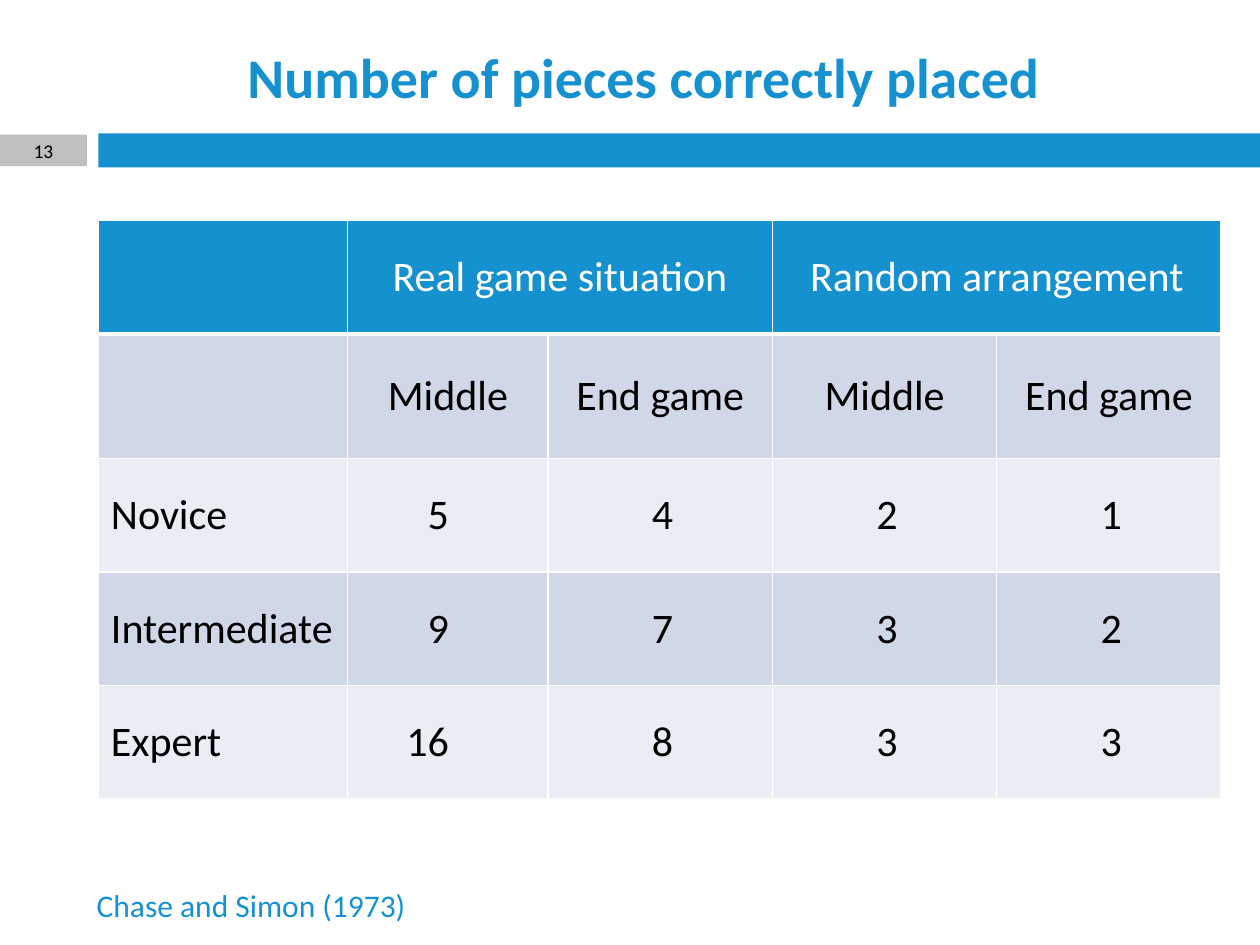
from lxml import etree
from pptx import Presentation
from pptx.dml.color import RGBColor as RGB
from pptx.enum.shapes import MSO_SHAPE as Shape
from pptx.enum.text import MSO_ANCHOR as Anchor, MSO_AUTO_SIZE as Auto, PP_ALIGN as Align
from pptx.oxml.ns import qn
from pptx.util import Pt

HUES = {"blue": "1691D0", "gray": "BFBFBF", "dark": "D0D8E8",
        "light": "E9EDF4", "white": "FFFFFF", "black": "000000"}
WIDTHS = [142.5, 114.5, 128.2, 128.2, 128.2]
HEIGHTS = [64.8, 71.3, 64.8, 64.8, 64.8]
ROWS = [
    ["", "Real game situation", "", "Random arrangement", ""],
    ["", "Middle", "End game", "Middle", "End game"],
    ["Novice", "5", "4", "2", "1"],
    ["Intermediate", "9", "7", "3", "2"],
    ["Expert", "16", "8", "3", "3"],
]


def hue(name):
    return RGB.from_string(HUES[name])


def write(frame, text, size=24, color="black", bold=False, align=Align.LEFT):
    para = frame.paragraphs[0]
    para.alignment = align
    run = para.add_run()
    run.text = text
    font = run.font
    font.name, font.size, font.bold = "Calibri", Pt(size), bold
    font.color.rgb = hue(color)


def place(shape, box):
    shape.left, shape.top, shape.width, shape.height = map(Pt, box)


def block(slide, box, color):
    shape = slide.shapes.add_shape(Shape.RECTANGLE, *map(Pt, box))
    shape.shadow.inherit = False
    shape.fill.solid()
    shape.fill.fore_color.rgb = hue(color)
    shape.line.fill.background()
    return shape


def header(slide, box):
    left, top, width, height = box
    # Blue bar and page number tab
    block(slide, (left, top + 57.6, width, 19.4), "blue")
    tab = block(slide, (0, top + 58.3, left - 6.5, 18), "gray")
    frame = tab.text_frame
    frame.vertical_anchor = Anchor.MIDDLE
    frame.margin_top = frame.margin_bottom = 0
    write(frame, "13", size=11.1, align=Align.CENTER)
    # Title
    title = slide.shapes.title
    place(title, (left, top, 623.5, height))
    title.text_frame.vertical_anchor = Anchor.MIDDLE
    write(title.text_frame, "Number of pieces correctly placed", size=32,
          color="blue", bold=True, align=Align.CENTER)


def edge(cell, base):
    props = cell._tc.get_or_add_tcPr()
    for side, size in zip("LRTB", (1, 1, 1, base)):
        line = etree.SubElement(props, qn(f"a:ln{side}"), w=str(Pt(size)))
        fill = etree.SubElement(line, qn("a:solidFill"))
        etree.SubElement(fill, qn("a:srgbClr"), val=HUES["white"])


def fill_cell(cell, text, row, col):
    edge(cell, 1 if row else 3)
    cell.fill.solid()
    cell.fill.fore_color.rgb = hue("blue" if row == 0 else "dark" if row % 2 else "light")
    cell.vertical_anchor = Anchor.MIDDLE
    if not text:
        return
    align = Align.CENTER if row < 2 else Align.RIGHT if col else Align.LEFT
    if align == Align.RIGHT:
        cell.margin_right = Pt(56.7)
    write(cell.text_frame, text, color="black" if row else "white", align=align)


def scores(slide, left, top, count):
    """Table with the first count columns."""
    widths = WIDTHS[:count]
    box = (left, top, sum(widths), sum(HEIGHTS))
    table = slide.shapes.add_table(len(ROWS), count, *map(Pt, box)).table
    table.first_row = table.horz_banding = False
    for col, width in zip(table.columns, widths):
        col.width = Pt(width)
    for row, height in zip(table.rows, HEIGHTS):
        row.height = Pt(height)
    for col in range(1, count, 2):
        table.cell(0, col).merge(table.cell(0, col + 1))
    for r, texts in enumerate(ROWS):
        for c, text in enumerate(texts[:count]):
            fill_cell(table.cell(r, c), text, r, c)


def source(slide, box):
    frame = slide.shapes.add_textbox(*map(Pt, box)).text_frame
    frame.word_wrap = True
    frame.auto_size = Auto.SHAPE_TO_FIT_TEXT
    write(frame, "Chase and Simon (1973)", size=18, color="blue")


def main():
    deck = Presentation()
    deck.slide_width, deck.slide_height = Pt(720), Pt(540)
    slide = deck.slides.add_slide(deck.slide_layouts[5])
    header(slide, (56.2, 18.7, 663.8, 49))
    # Full table, with the real game part on top
    for count in (5, 3):
        scores(slide, 56.2, 126, count)
    source(slide, (48.2, 502.6, 396, 29))
    deck.save("out.pptx")


if __name__ == "__main__":
    main()
